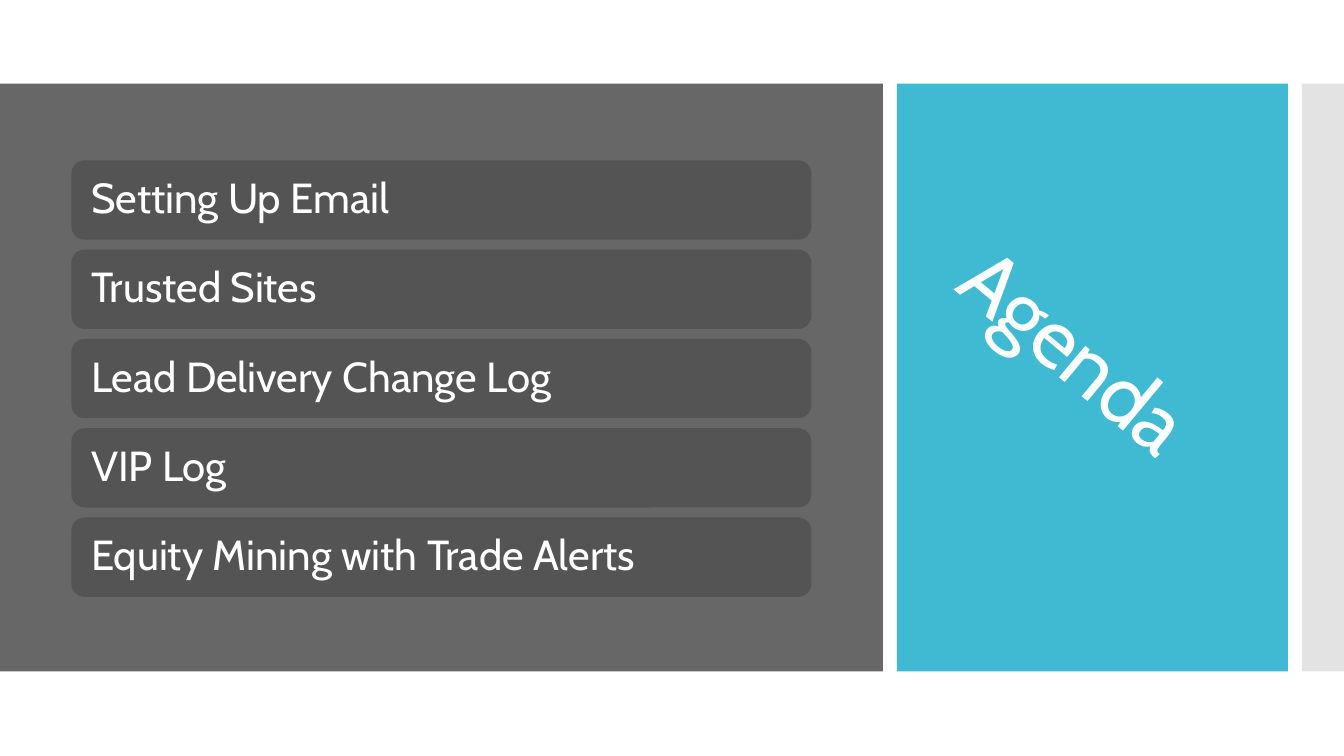
from pptx import Presentation
from pptx.dml.color import RGBColor
from pptx.enum.shapes import MSO_SHAPE
from pptx.enum.text import MSO_ANCHOR, PP_ALIGN
from pptx.oxml.ns import qn
from pptx.util import Cm, Pt
from lxml import etree

RECTANGLE = MSO_SHAPE.RECTANGLE
ROUNDED = MSO_SHAPE.ROUNDED_RECTANGLE
MIDDLE = MSO_ANCHOR.MIDDLE
LEFT = PP_ALIGN.LEFT

FONT = "Cabin"
WHITE, GREY, DARK_GREY = "FFFFFF", "676767", "545454"
BLUE, LIGHT_GREY = "40BAD2", "C8C8C8"
TOPICS = [
    "Setting Up Email",
    "Trusted Sites",
    "Lead Delivery Change Log",
    "VIP Log",
    "Equity Mining with Trade Alerts",
]

# Panels in cm: left, top, width, height
BAND_TOP, BAND_HEIGHT = 2.11, 14.81
TOPICS_BOX = (0, BAND_TOP, 22.25, BAND_HEIGHT)
TITLE_BOX = (22.6, BAND_TOP, 9.86, BAND_HEIGHT)
EDGE_BOX = (32.81, BAND_TOP, 1.06, BAND_HEIGHT)


def color(value):
    return RGBColor.from_string(value)


def add_block(page, kind, box, fill):
    block = page.shapes.add_shape(kind, *(Cm(length) for length in box))
    block.shadow.inherit = False
    block.fill.solid()
    block.fill.fore_color.rgb = color(fill)
    block.line.fill.background()
    return block


def write(shape, text, size, inset):
    frame = shape.text_frame
    frame.word_wrap = True
    frame.vertical_anchor = MIDDLE
    frame.margin_left = frame.margin_right = Cm(inset)
    para = frame.paragraphs[0]
    para.alignment = LEFT
    para.line_spacing = 0.9
    span = para.add_run()
    span.text = text
    span.font.name = FONT
    span.font.size = Pt(size)
    span.font.color.rgb = color(WHITE)
    return span


def add_topics(page, box):
    left, top, width, height = box
    add_block(page, RECTANGLE, box, GREY)
    margin, first, pitch, bar_height = 1.8, 1.93, 2.25, 2.0
    for index, topic in enumerate(TOPICS):
        bar_box = (left + margin, top + first + index * pitch,
                   width - 2 * margin, bar_height)
        bar = add_block(page, ROUNDED, bar_box, DARK_GREY)
        write(bar, topic, 30, 0.4)


def add_title(page, box):
    left, top, width, height = box
    add_block(page, RECTANGLE, box, BLUE)
    title = page.shapes.add_textbox(
        Cm(left + 0.72), Cm(top + 5.94), Cm(8.18), Cm(2.34))
    title.rotation = 39.8
    span = write(title, "Agenda", 60, 0.25)
    span.font._element.set("spc", "-60")  # tighter letter spacing


def add_edge(page, box):
    edge = add_block(page, RECTANGLE, box, LIGHT_GREY)
    # Half transparent fill
    tint = edge._element.spPr.find(qn("a:solidFill"))[0]
    etree.SubElement(tint, qn("a:alpha")).set("val", "50000")


def main():
    deck = Presentation()
    deck.slide_width, deck.slide_height = Cm(33.87), Cm(19.05)
    page = deck.slides.add_slide(deck.slide_layouts[6])
    page.background.fill.solid()
    page.background.fill.fore_color.rgb = color(WHITE)
    add_topics(page, TOPICS_BOX)
    add_title(page, TITLE_BOX)
    add_edge(page, EDGE_BOX)
    deck.save("out.pptx")


if __name__ == "__main__":
    main()
